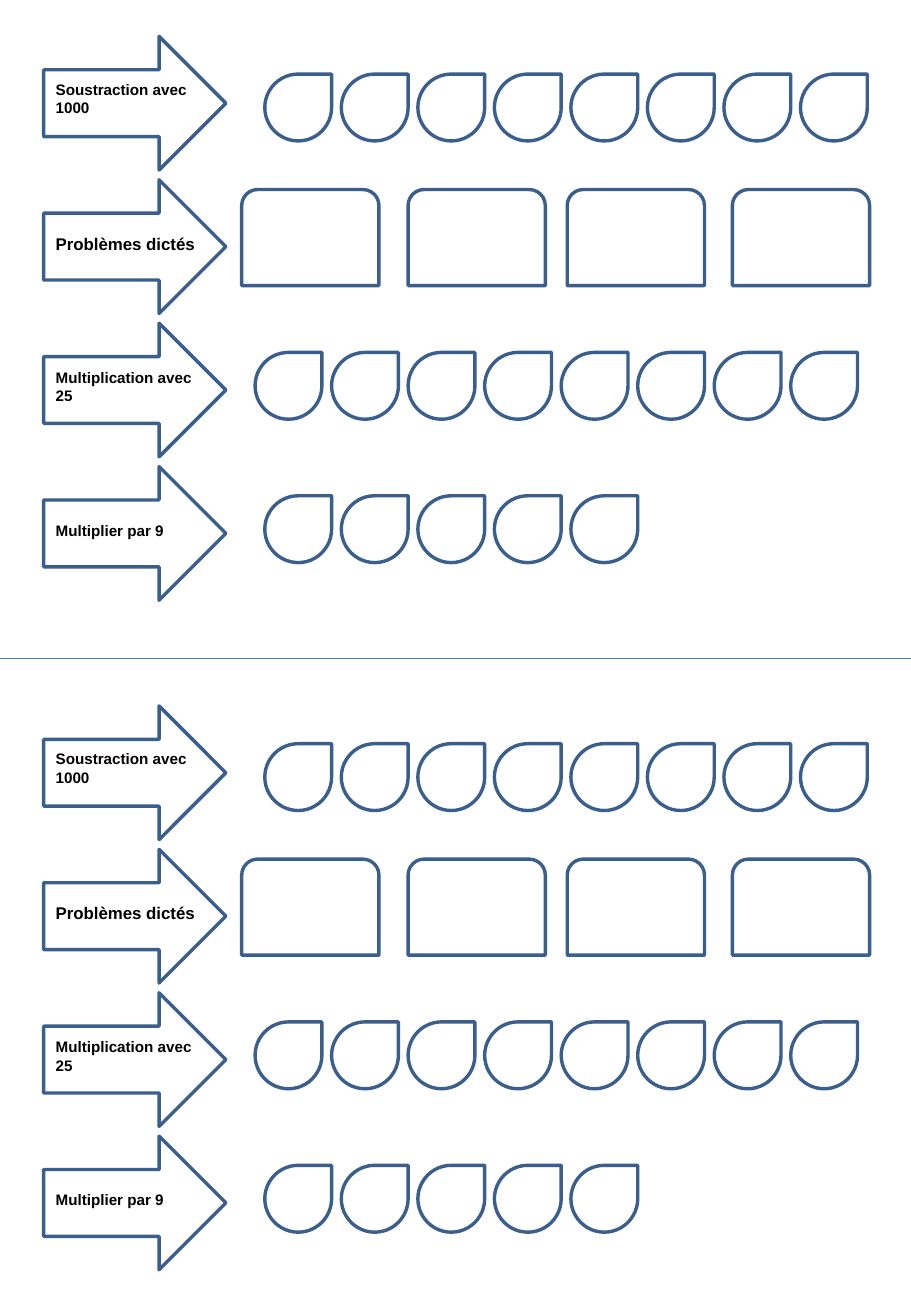
from dataclasses import dataclass

from lxml import etree
from pptx import Presentation
from pptx.dml.color import RGBColor
from pptx.enum.shapes import MSO_CONNECTOR, MSO_SHAPE
from pptx.enum.text import MSO_AUTO_SIZE
from pptx.oxml.ns import qn
from pptx.util import Inches, Pt

ARROW = MSO_SHAPE.RIGHT_ARROW
TEARDROP = MSO_SHAPE.TEAR
ANSWER_BOX = MSO_SHAPE.ROUND_2_SAME_RECTANGLE
STRAIGHT = MSO_CONNECTOR.STRAIGHT
FIT_SHAPE = MSO_AUTO_SIZE.SHAPE_TO_FIT_TEXT


@dataclass(frozen=True)
class Theme:
    outline: RGBColor = RGBColor(0x3A, 0x5F, 0x8C)
    divider: RGBColor = RGBColor(0x4B, 0x7E, 0xBC)
    text: RGBColor = RGBColor(0, 0, 0)
    font: str = "Arial"
    label_size: int = 9
    large_label_size: int = 10
    outline_width: float = 2
    divider_width: float = 0.75


@dataclass(frozen=True)
class Exercise:
    label: str
    label_size: int
    label_box: tuple
    mark: int
    mark_size: tuple
    mark_top: float
    mark_lefts: tuple


THEME = Theme()
SLIDE_WIDTH, SLIDE_HEIGHT = 7.5, 10.83
SHEET_LEFT, SHEET_TOP, SHEET_PITCH = 0.36, 0.3, 5.51
DIVIDER_TOP = 5.42
ROW_PITCH = 1.18
ARROW_SIZE = (1.5, 1.1)
TEARDROP_SIZE = (0.55, 0.55)
TEARDROP_PITCH = 0.63
ANSWER_BOX_SIZE = (1.13, 0.79)


def teardrop_lefts(first, count):
    return tuple(first + index * TEARDROP_PITCH for index in range(count))


EXERCISES = (
    Exercise("Soustraction avec 1000", THEME.label_size, (0.31, 1.42, 0.4),
             TEARDROP, TEARDROP_SIZE, 0.31, teardrop_lefts(1.82, 8)),
    Exercise("Problèmes dictés", THEME.large_label_size, (0.39, 1.5, 0.27),
             ANSWER_BOX, ANSWER_BOX_SIZE, 0.08, (1.63, 3.0, 4.31, 5.67)),
    Exercise("Multiplication avec 25", THEME.label_size, (0.32, 1.42, 0.4),
             TEARDROP, TEARDROP_SIZE, 0.24, teardrop_lefts(1.74, 8)),
    Exercise("Multiplier par 9", THEME.label_size, (0.4, 1.42, 0.25),
             TEARDROP, TEARDROP_SIZE, 0.24, teardrop_lefts(1.82, 5)),
)


def add_outline(slide, kind, left, top, size):
    width, height = size
    shape = slide.shapes.add_shape(
        kind, Inches(left), Inches(top), Inches(width), Inches(height))
    shape.shadow.inherit = False
    shape.fill.background()
    shape.line.color.rgb = THEME.outline
    shape.line.width = Pt(THEME.outline_width)


def add_label(slide, exercise, left, top):
    offset, width, height = exercise.label_box
    label = slide.shapes.add_textbox(
        Inches(left), Inches(top + offset), Inches(width), Inches(height))
    text_frame = label.text_frame
    text_frame.word_wrap = True
    text_frame.auto_size = FIT_SHAPE
    text_frame.text = exercise.label
    font = text_frame.paragraphs[0].runs[0].font
    font.name = THEME.font
    font.size = Pt(exercise.label_size)
    font.bold = True
    font.color.rgb = THEME.text


def add_exercise(slide, exercise, left, top):
    add_outline(slide, ARROW, left, top, ARROW_SIZE)
    add_label(slide, exercise, left, top)
    for mark_left in exercise.mark_lefts:
        add_outline(slide, exercise.mark, left + mark_left,
                    top + exercise.mark_top, exercise.mark_size)


def add_sheet(slide, left, top):
    for row, exercise in enumerate(EXERCISES):
        add_exercise(slide, exercise, left, top + row * ROW_PITCH)


def add_divider(slide, left, top, width):
    divider = slide.shapes.add_connector(
        STRAIGHT, Inches(left), Inches(top), Inches(left + width), Inches(top))
    divider.line.color.rgb = THEME.divider
    divider.line.width = Pt(THEME.divider_width)
    etree.SubElement(divider._element.spPr, qn("a:effectLst"))


def main():
    presentation = Presentation()
    presentation.slide_width = Inches(SLIDE_WIDTH)
    presentation.slide_height = Inches(SLIDE_HEIGHT)
    slide = presentation.slides.add_slide(presentation.slide_layouts[6])
    add_divider(slide, 0, DIVIDER_TOP, SLIDE_WIDTH)
    for sheet in range(2):
        add_sheet(slide, SHEET_LEFT, SHEET_TOP + sheet * SHEET_PITCH)
    presentation.save("out.pptx")


if __name__ == "__main__":
    main()
